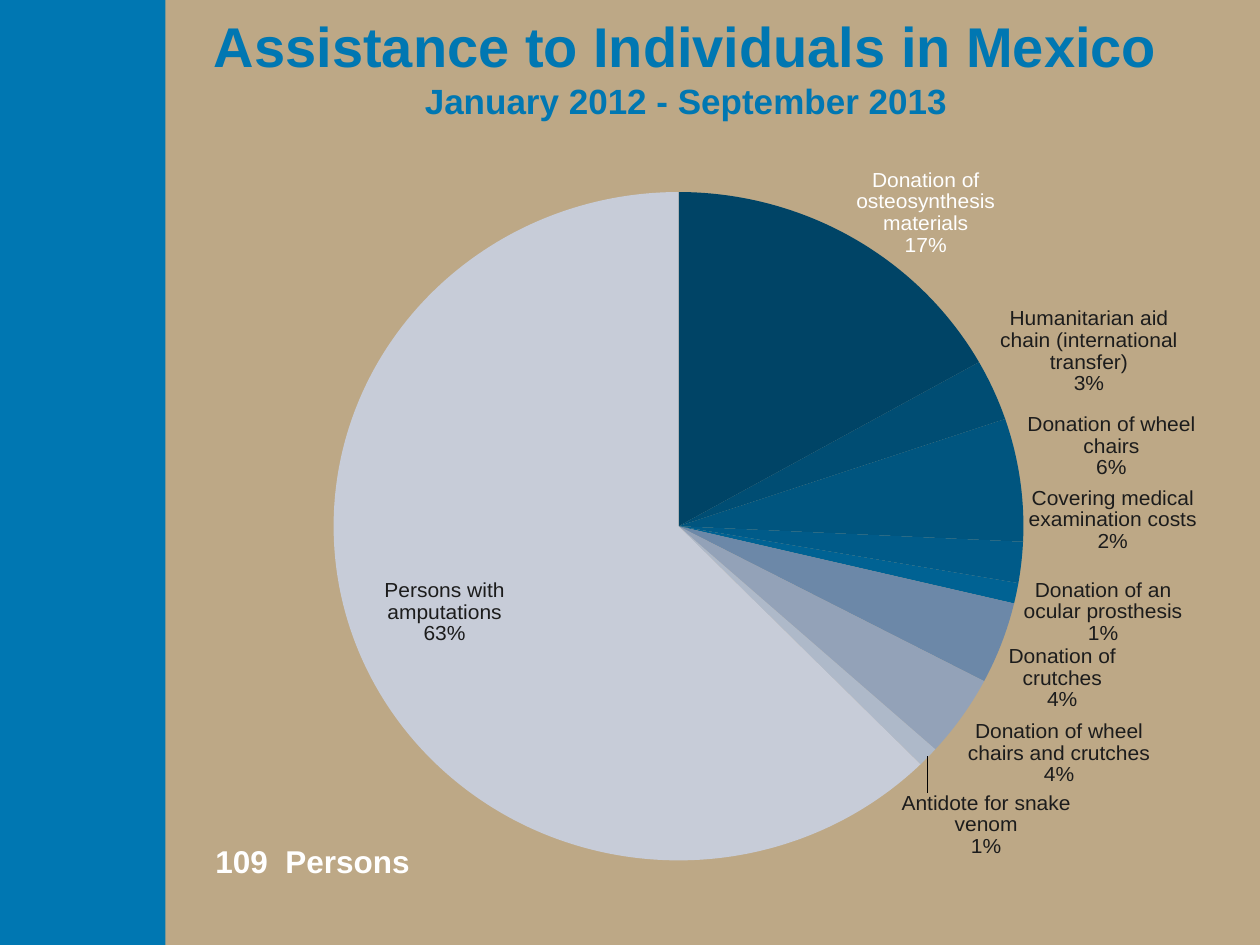
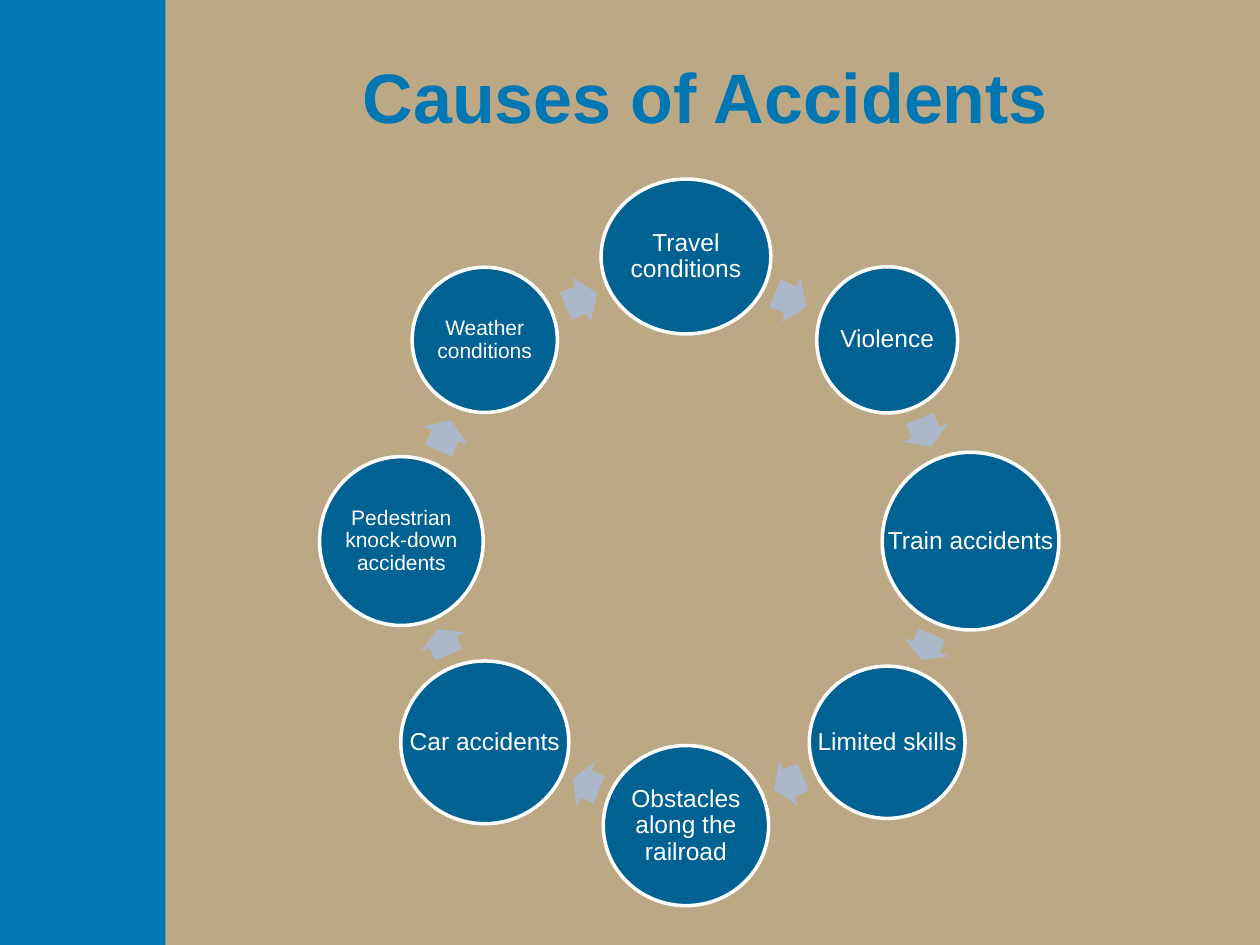
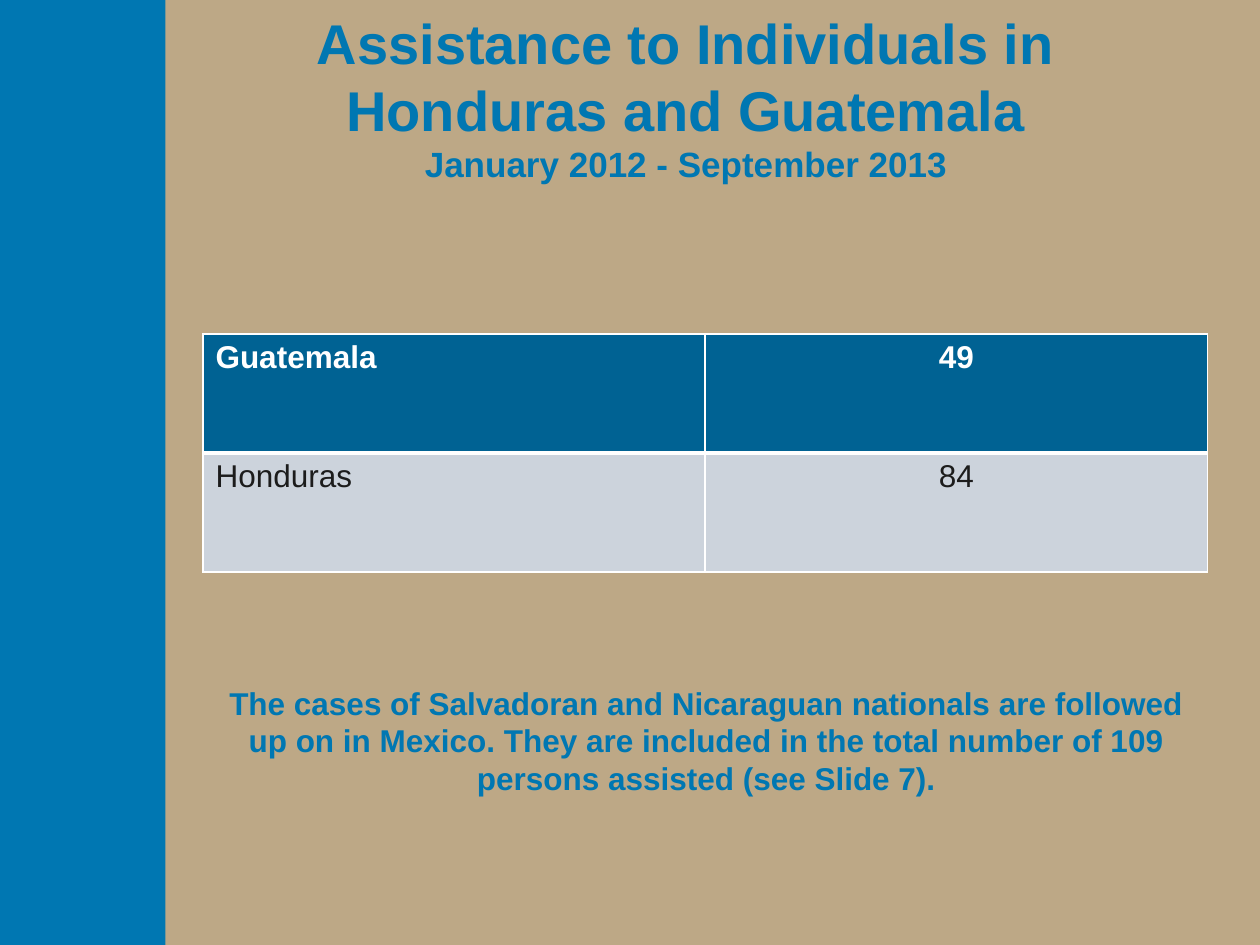
import dataclasses
import math

import lxml.etree
import pptx
import pptx.chart.data
import pptx.dml.color
import pptx.enum.chart
import pptx.enum.shapes
import pptx.enum.text
import pptx.oxml.ns
import pptx.util

Pt = pptx.util.Pt
qn = pptx.oxml.ns.qn
Place = pptx.enum.chart.XL_LABEL_POSITION
Shape = pptx.enum.shapes.MSO_SHAPE
Align = pptx.enum.text.PP_ALIGN
Anchor = pptx.enum.text.MSO_ANCHOR


@dataclasses.dataclass(frozen=True)
class Theme:
    font: str = "Arial"
    sand: str = "BDA886"
    blue: str = "0077B2"
    deep: str = "006293"
    mist: str = "ABB7C8"
    pale: str = "CCD3DC"
    ink: str = "1C1C1C"
    white: str = "FFFFFF"
    wedges: tuple = ("004466", "004D73", "00557F", "005B89", "006293",
                     "6C88A8", "93A2B8", "AEB9C9", "C7CCD8")
    huge: int = 40
    head: int = 32
    sub: int = 20
    body: int = 18
    node: int = 14
    small: int = 12


THEME = Theme()

PERIOD = "January 2012 - September 2013"

# Category, value, label offset (share of the chart) and fixed label text
SLICES = [
    ("Donation of osteosynthesis materials", 17, (0, 0.01), None),
    ("Humanitarian aid chain (international transfer)", 3, (0, 0.01), None),
    ("Donation of wheel chairs", 6, (0, 0), None),
    ("Covering medical examination costs", 2, (0, -0.1), None),
    ("Donation of an ocular prosthesis", 1, (0, -0.02), None),
    ("Donation of crutches", 4, (0, 0), None),
    ("Donation of wheel chairs and crutches", 4, (0, 0), None),
    ("Antidote for snake venom", 1, (-0.03, 0.04), None),
    ("Persons with amputations", 63, (-0.07, 0.03),
     "Persons with\namputations\n63%"),
]

# Cause, width, height and type size, clockwise from the top
CAUSES = [
    ("Travel conditions", 97, 88.5, THEME.node),
    ("Violence", 80.5, 83.5, THEME.node),
    ("Train accidents", 101, 101.5, THEME.node),
    ("Limited skills", 89, 87, THEME.node),
    ("Obstacles along the railroad", 94.5, 91.5, THEME.node),
    ("Car accidents", 96, 93, THEME.node),
    ("Pedestrian knock-down accidents", 93.5, 96.5, THEME.small),
    ("Weather conditions", 83, 83, THEME.small),
]


def tint(code):
    return pptx.dml.color.RGBColor.from_string(code)


def style(font, size, color, bold=False):
    font.name = THEME.font
    font.size = Pt(size)
    font.bold = bold
    font.color.rgb = tint(color)


def paint(shape, fill, line=None):
    shape.shadow.inherit = False
    shape.fill.solid()
    shape.fill.fore_color.rgb = tint(fill)
    if line:
        shape.line.color.rgb = tint(line)
        shape.line.width = Pt(2)
    else:
        shape.line.fill.background()


def write(slide, box, text, sizes, color, bold=True, align=Align.CENTER,
          anchor=Anchor.MIDDLE, inset=None):
    """Add a text box; each size in turn goes to one run."""
    frame = slide.shapes.add_textbox(*map(Pt, box)).text_frame
    frame.word_wrap = True
    frame.vertical_anchor = anchor
    if inset is not None:
        frame.margin_left = frame.margin_right = Pt(inset)
        frame.margin_top = frame.margin_bottom = Pt(inset)
    para = frame.paragraphs[0]
    para.text = text
    para.alignment = align
    for run, size in zip(para.runs, sizes):
        style(run.font, size, color, bold)
    return para


def start(deck):
    """Add a blank slide with the side band."""
    slide = deck.slides.add_slide(deck.slide_layouts[6])
    band = slide.shapes.add_shape(Shape.RECTANGLE, 0, 0, Pt(94.5), Pt(540))
    paint(band, THEME.blue)
    return slide


def title(slide, box, text, size=THEME.head, sub=""):
    full = f"{text}\v{sub}" if sub else text
    write(slide, box, full, (size, THEME.sub), THEME.blue)


def layout(parent, index, **items):
    """Put a manual chart layout into the parent at the index."""
    for old in parent.findall(qn("c:layout")):
        parent.remove(old)
    node = lxml.etree.Element(qn("c:layout"))
    inner = lxml.etree.SubElement(node, qn("c:manualLayout"))
    for name, value in items.items():
        lxml.etree.SubElement(inner, qn(f"c:{name}")).set("val", str(value))
    parent.insert(index, node)


def tag(point, index, shift, text):
    """Label one slice with its category and share."""
    label = point.data_label
    color = THEME.ink if index else THEME.white
    if text:
        label.text_frame.text = text
        for para in label.text_frame.paragraphs:
            for run in para.runs:
                style(run.font, THEME.small, color)
    else:
        style(label.font, THEME.small, color)
    last = index == len(SLICES) - 1
    label.position = Place.CENTER if last else Place.OUTSIDE_END
    # Show category and percent on two lines, moved by the offset
    node = point._element.find(f"{qn('c:dLbls')}/{qn('c:dLbl')}[{index + 1}]")
    for name, flag in (("Val", 0), ("CatName", 1), ("Percent", 1)):
        node.find(qn(f"c:show{name}")).set("val", str(flag))
    lxml.etree.SubElement(node, qn("c:separator")).text = "\n"
    layout(node, 1, x=shift[0], y=shift[1])


def pie(slide, box):
    data = pptx.chart.data.CategoryChartData()
    data.categories = [part[0] for part in SLICES]
    data.add_series("Series 1", [part[1] for part in SLICES])
    kind = pptx.enum.chart.XL_CHART_TYPE.PIE
    chart = slide.shapes.add_chart(kind, *map(Pt, box), data).chart
    chart.has_title = False
    chart.has_legend = False
    style(chart.font, THEME.body, THEME.white)
    area = chart._chartSpace.find(f".//{qn('c:plotArea')}")
    layout(area, 0, layoutTarget="inner", xMode="edge", yMode="edge",
           x=0.14, y=0.03, w=0.67, h=0.88)

    # Slices and their labels
    points = chart.plots[0].series[0].points
    for index, (_, _, shift, text) in enumerate(SLICES):
        point = points[index]
        point.format.fill.solid()
        point.format.fill.fore_color.rgb = tint(THEME.wedges[index])
        point.format.line.fill.background()
        tag(point, index, shift, text)


def ring(slide, box):
    """Set the causes on a circle, with arrows between neighbours."""
    left, top, width, height = box
    mid_x, mid_y = left + width / 2, top + height / 2
    reach = width / 2
    step = 2 * math.pi / len(CAUSES)
    chord = 2 * reach * math.sin(step / 2)
    for index, (text, wide, high, size) in enumerate(CAUSES):
        # Cause
        angle = index * step
        x = mid_x + reach * math.sin(angle)
        y = mid_y - reach * math.cos(angle)
        spot = (x - wide / 2, y - high / 2, wide, high)
        disc = slide.shapes.add_shape(Shape.OVAL, *map(Pt, spot))
        paint(disc, THEME.deep, THEME.white)
        para = write(slide, spot, text, (size,), THEME.white, False, inset=1.5)
        para.line_spacing = 0.9

        # Arrow in the middle of the gap to the next cause
        _, wide_b, high_b, _ = CAUSES[(index + 1) % len(CAUSES)]
        near, far = (wide + high) / 4, (wide_b + high_b) / 4
        along = (chord + near - far) / 2
        turn = angle + step / 2
        long, tall = 0.53 * (chord - near - far), 28
        arrow = slide.shapes.add_shape(
            Shape.RIGHT_ARROW,
            Pt(x + along * math.cos(turn) - long / 2),
            Pt(y + along * math.sin(turn) - tall / 2), Pt(long), Pt(tall))
        arrow.rotation = math.degrees(turn)
        arrow.adjustments[0], arrow.adjustments[1] = 0.6, 0.5
        paint(arrow, THEME.mist)


def border(side, width):
    line = lxml.etree.Element(qn(f"a:ln{side}"), w=str(Pt(width)))
    fill = lxml.etree.SubElement(line, qn("a:solidFill"))
    lxml.etree.SubElement(fill, qn("a:srgbClr"), val=THEME.white)
    return line


def grid(slide, box, rows):
    table = slide.shapes.add_table(
        len(rows), len(rows[0]), *map(Pt, box)).table
    for r, row in enumerate(rows):
        first = r == 0
        for c, text in enumerate(row):
            cell = table.cell(r, c)
            cell.fill.solid()
            cell.fill.fore_color.rgb = tint(THEME.deep if first else THEME.pale)
            para = cell.text_frame.paragraphs[0]
            para.text = text
            para.alignment = Align.CENTER if c else Align.LEFT
            style(para.runs[0].font, THEME.body,
                  THEME.white if first else THEME.ink, first)
            # A thick rule parts the header from the body
            widths = {"L": 1, "R": 1, "T": 3 if r == 1 else 1,
                      "B": 3 if first else 1}
            props = cell._tc.get_or_add_tcPr()
            for index, (side, width) in enumerate(widths.items()):
                props.insert(index, border(side, width))


def main():
    deck = pptx.Presentation()
    deck.slide_width, deck.slide_height = Pt(720), Pt(540)
    back = deck.slide_master.background.fill
    back.solid()
    back.fore_color.rgb = tint(THEME.sand)

    # Help in Mexico
    slide = start(deck)
    title(slide, (105, 10, 574, 56), "Assistance to Individuals in Mexico",
          sub=PERIOD)
    pie(slide, (99.4, 82.8, 607, 448))
    write(slide, (116, 477.4, 142, 29), "109  Persons", (THEME.body,),
          THEME.white, align=Align.LEFT, anchor=Anchor.TOP)

    # Causes
    slide = start(deck)
    ring(slide, (229.4, 146.6, 325.2, 325.2))
    title(slide, (116, 9.4, 574, 90), "Causes of Accidents", THEME.huge)

    # Help in Honduras and Guatemala
    slide = start(deck)
    title(slide, (105, 10, 574, 90),
          "Assistance to Individuals in Honduras and Guatemala", sub=PERIOD)
    grid(slide, (116, 190.8, 574, 136),
         [("Guatemala", "49"), ("Honduras", "84")])
    write(slide, (116.6, 378, 574, 90),
          "The cases of Salvadoran and Nicaraguan nationals are followed up "
          "on in Mexico. They are included in the total number of 109 persons "
          "assisted (see Slide 7).", (THEME.body,), THEME.blue)

    deck.save("out.pptx")


if __name__ == "__main__":
    main()
